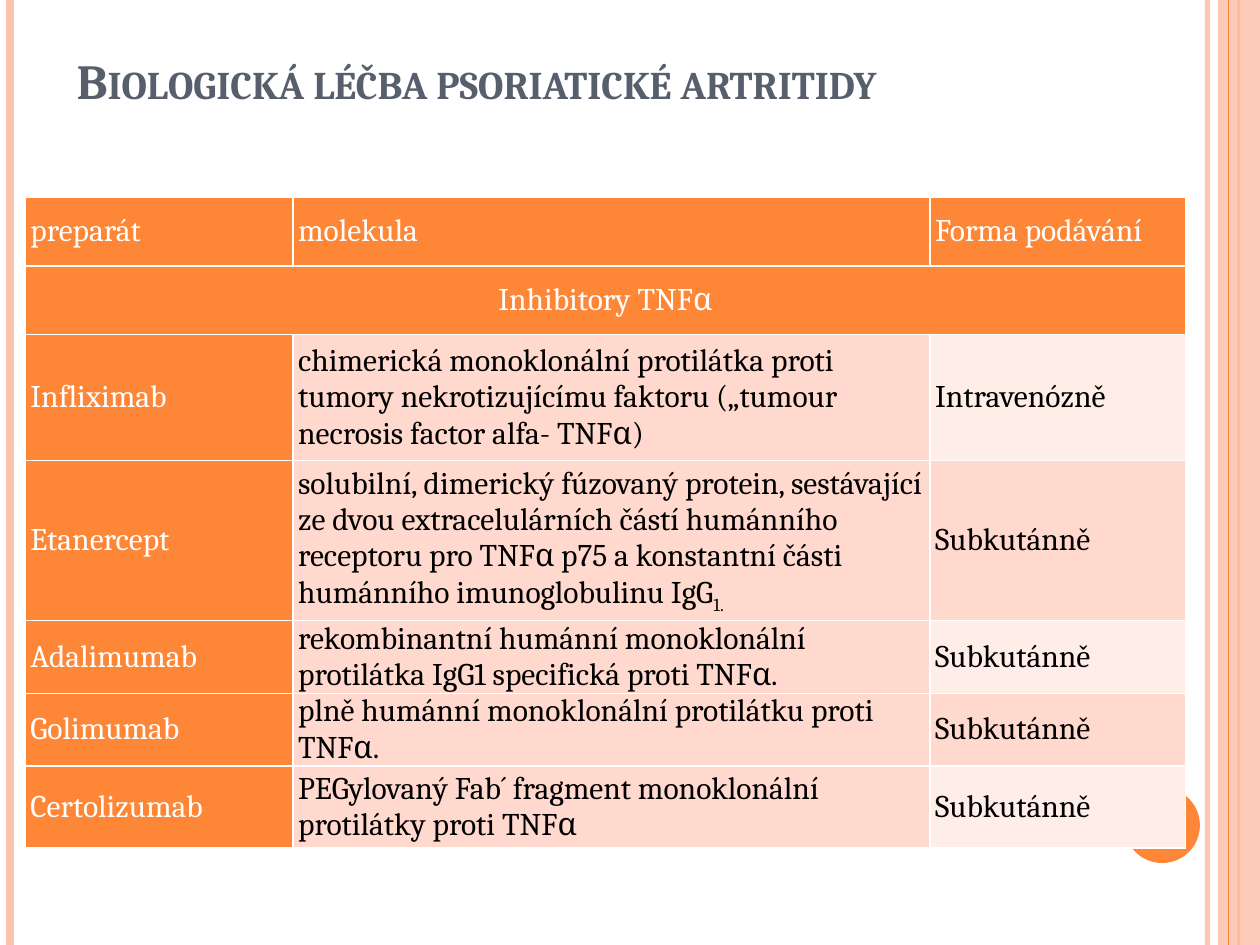
from dataclasses import dataclass

from lxml import etree
from pptx import Presentation
from pptx.dml.color import RGBColor
from pptx.enum.shapes import MSO_CONNECTOR, MSO_SHAPE
from pptx.enum.text import MSO_ANCHOR, PP_ALIGN
from pptx.oxml.ns import qn
from pptx.util import Pt


@dataclass(frozen=True)
class Theme:
    font: str = "Cambria"
    title_size: int = 28
    table_size: int = 18
    title: str = "575F6D"
    accent: str = "FE8637"
    stripe: str = "FEC3AE"
    band_dark: str = "FFD9CE"
    band_light: str = "FFEDE8"
    white: str = "FFFFFF"
    black: str = "000000"


THEME = Theme()
WIDTH, HEIGHT = 720, 540

TITLE = "Biologická léčba psoriatické artritidy"
HEADER = ("preparát", "molekula", "Forma podávání")
GROUP = "Inhibitory TNFα"
DRUGS = [
    ("Infliximab",
     "chimerická monoklonální protilátka proti tumory nekrotizujícímu faktoru "
     "(„tumour necrosis factor alfa- TNFα)",
     "Intravenózně"),
    ("Etanercept",
     "solubilní, dimerický fúzovaný protein, sestávající ze dvou extracelulárních částí "
     "humánního receptoru pro TNFα p75 a konstantní části humánního imunoglobulinu IgG",
     "Subkutánně"),
    ("Adalimumab",
     "rekombinantní humánní monoklonální protilátka IgG1 specifická proti TNFα.",
     "Subkutánně"),
    ("Golimumab", "plně humánní monoklonální protilátku proti TNFα.", "Subkutánně"),
    ("Certolizumab", "PEGylovaný Fab´ fragment monoklonální protilátky proti TNFα", "Subkutánně"),
]
SUBSCRIPTS = {"Etanercept": "1."}

TABLE_LEFT, TABLE_TOP = 14.4, 112.5
COLUMN_WIDTHS = (153, 364, 146)
ROW_HEIGHTS = (39.4, 39.4, 72, 91.4, 39.4, 39.4, 46.8)

OUTER_LINES = [(690, THEME.stripe, 3, 93), (5.8, THEME.stripe, 4.5, 100), (707.8, THEME.accent, 1.5, 100)]
INNER_LINE = (702, THEME.accent, 0.75, 100)
STRIPE = (696, 0, 24, HEIGHT)
DISC = (642.5, 450, 43.2, 43.2)


def color(value):
    return RGBColor.from_string(value)


def set_alpha(element, percent):
    if percent < 100:
        fill_color = next(element.iter(qn("a:srgbClr")))
        etree.SubElement(fill_color, qn("a:alpha")).set("val", str(percent * 1000))


def add_vertical_line(slide, x, line_color, width, opacity):
    line = slide.shapes.add_connector(MSO_CONNECTOR.STRAIGHT, Pt(x), Pt(0), Pt(x), Pt(HEIGHT))
    line.line.color.rgb = color(line_color)
    line.line.width = Pt(width)
    properties = line._element.spPr
    set_alpha(properties, opacity)
    etree.SubElement(properties, qn("a:effectLst"))


def add_plain_shape(slide, kind, box, fill, opacity=100):
    shape = slide.shapes.add_shape(kind, *map(Pt, box))
    shape.shadow.inherit = False
    shape.fill.solid()
    shape.fill.fore_color.rgb = color(fill)
    shape.line.fill.background()
    set_alpha(shape._element.spPr, opacity)


def add_decoration(slide):
    for line in OUTER_LINES:
        add_vertical_line(slide, *line)
    add_plain_shape(slide, MSO_SHAPE.RECTANGLE, STRIPE, THEME.stripe, 87)
    add_vertical_line(slide, *INNER_LINE)
    add_plain_shape(slide, MSO_SHAPE.OVAL, DISC, THEME.accent)


def style_run(run, size, text_color, bold=False):
    run.font.name = THEME.font
    run.font.size = Pt(size)
    run.font.bold = bold
    run.font.color.rgb = color(text_color)


def add_borders(cell):
    properties = cell._tc.get_or_add_tcPr()
    for index, side in enumerate(("lnL", "lnR", "lnT", "lnB")):
        border = etree.Element(qn(f"a:{side}"), w=str(Pt(1)))
        fill = etree.SubElement(border, qn("a:solidFill"))
        etree.SubElement(fill, qn("a:srgbClr")).set("val", THEME.white)
        properties.insert(index, border)


def fill_cell(cell, text, fill, text_color, subscript=""):
    cell.margin_left = cell.margin_right = Pt(3)
    cell.margin_top = cell.margin_bottom = Pt(0)
    cell.vertical_anchor = MSO_ANCHOR.MIDDLE
    cell.fill.solid()
    cell.fill.fore_color.rgb = color(fill)
    add_borders(cell)
    cell.text_frame.text = text
    paragraph = cell.text_frame.paragraphs[0]
    if subscript:
        run = paragraph.add_run()
        run.text = subscript
        run._r.get_or_add_rPr().set("baseline", "-25000")
    for run in paragraph.runs:
        style_run(run, THEME.table_size, text_color)


def add_drug_table(slide):
    rows = [HEADER, (GROUP, "", ""), *DRUGS]
    table = slide.shapes.add_table(
        len(rows), len(HEADER), Pt(TABLE_LEFT), Pt(TABLE_TOP),
        Pt(sum(COLUMN_WIDTHS)), Pt(sum(ROW_HEIGHTS))).table
    for column, width in zip(table.columns, COLUMN_WIDTHS):
        column.width = Pt(width)
    for row, height in zip(table.rows, ROW_HEIGHTS):
        row.height = Pt(height)
    for row_index, texts in enumerate(rows):
        last_fill = THEME.band_dark if row_index % 2 else THEME.band_light
        fills = (THEME.accent, THEME.band_dark, last_fill)
        for column_index, text in enumerate(texts):
            is_heading = row_index < 2 or column_index == 0
            fill_cell(
                table.cell(row_index, column_index), text,
                THEME.accent if is_heading else fills[column_index],
                THEME.white if is_heading else THEME.black,
                SUBSCRIPTS.get(texts[0], "") if column_index == 1 else "")
    group_cell = table.cell(1, 0)
    group_cell.merge(table.cell(1, len(HEADER) - 1))
    group_cell.text_frame.paragraphs[0].alignment = PP_ALIGN.CENTER


def add_title(slide):
    text_frame = slide.shapes.add_textbox(Pt(36.7), Pt(-36), Pt(629.3), Pt(102.2)).text_frame
    text_frame.word_wrap = True
    text_frame.vertical_anchor = MSO_ANCHOR.BOTTOM
    text_frame.text = TITLE
    run = text_frame.paragraphs[0].runs[0]
    style_run(run, THEME.title_size, THEME.title, bold=True)
    run._r.get_or_add_rPr().set("cap", "small")


def main():
    presentation = Presentation()
    presentation.slide_width, presentation.slide_height = Pt(WIDTH), Pt(HEIGHT)
    slide = presentation.slides.add_slide(presentation.slide_layouts[6])
    add_decoration(slide)
    add_drug_table(slide)
    add_title(slide)
    presentation.save("out.pptx")


if __name__ == "__main__":
    main()
